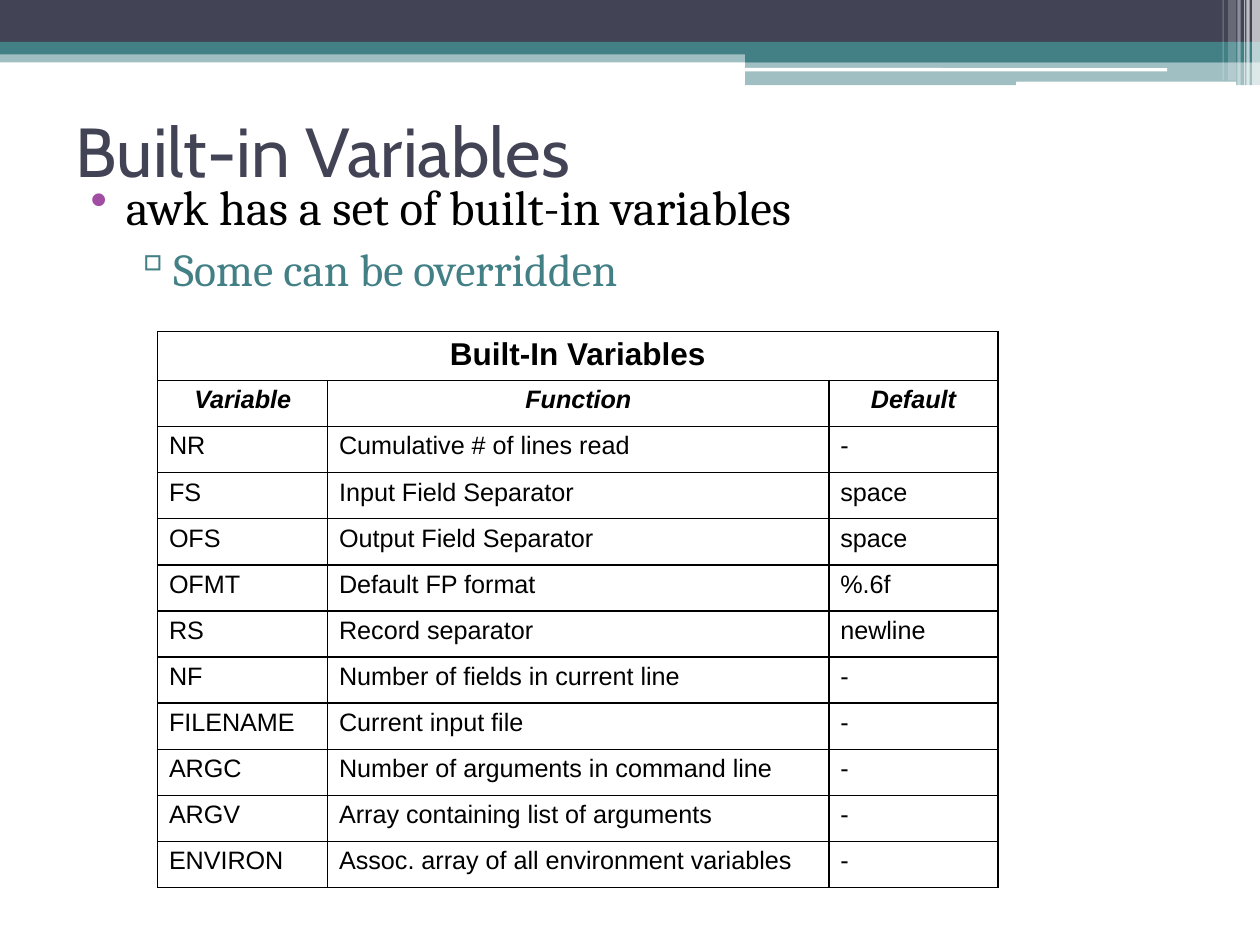
from dataclasses import dataclass

from lxml import etree
from pptx import Presentation
from pptx.dml.color import RGBColor
from pptx.enum.shapes import MSO_SHAPE
from pptx.enum.text import MSO_ANCHOR, PP_ALIGN
from pptx.oxml.ns import qn
from pptx.util import Inches, Pt

RECT = MSO_SHAPE.RECTANGLE
ROUNDED = MSO_SHAPE.ROUNDED_RECTANGLE
LEFT, CENTER = PP_ALIGN.LEFT, PP_ALIGN.CENTER
TOP, MIDDLE = MSO_ANCHOR.TOP, MSO_ANCHOR.MIDDLE
TITLE_ONLY = 5


@dataclass(frozen=True)
class Theme:
    navy: str = "424456"
    teal: str = "438086"
    purple: str = "A04DA3"
    white: str = "FFFFFF"
    black: str = "000000"
    title_font: str = "Cabin"
    body_font: str = "Cambria"
    table_font: str = "Arial"
    title_size: int = 44
    bullet_size: int = 31
    sub_bullet_size: int = 29
    caption_size: int = 20
    cell_size: int = 16
    border_width: float = 1


THEME = Theme()

# Header parts: left, top, width, height, colour, opacity in percent
BANDS = [
    (0, 0.45, 11.11, 0.1, THEME.teal, 50),
    (0, 0, 11.11, 0.38, THEME.navy, 100),
    (0, 0.37, 11.11, 0.11, THEME.teal, 100),
    (6.57, 0.44, 4.54, 0.11, THEME.teal, 100),
    (6.57, 0.53, 4.54, 0.22, THEME.teal, 50),
]
WHITE_BARS = [
    (6.57, 0.6, 3.72, 0.03, THEME.white, 100),
    (8.96, 0.72, 1.94, 0.04, THEME.white, 100),
]
STRIPES = [
    (left, 0, width, height, THEME.white, opacity)
    for left, width, height, opacity in [
        (11.04, 0.07, 0.76, 65), (10.99, 0.03, 0.76, 65),
        (10.97, 0.01, 0.76, 60), (10.91, 0.03, 0.76, 40),
        (10.83, 0.07, 0.71, 20), (10.78, 0.01, 0.71, 30),
    ]
]

# Bullets: text, size, colour, mark, mark colour, left margin, indent
BULLETS = [
    ("awk has a set of built-in variables", THEME.bullet_size, THEME.black,
     "•", THEME.purple, 0.44, -0.31),
    ("Some can be overridden", THEME.sub_bullet_size, THEME.teal,
     "▫", THEME.teal, 0.8, -0.3),
]

COLUMN_WIDTHS = [1.5, 4.42, 1.49]
VARIABLES = [
    ("Built-In Variables", "", ""),
    ("Variable", "Function", "Default"),
    ("NR", "Cumulative # of lines read", "-"),
    ("FS", "Input Field Separator", "space"),
    ("OFS", "Output Field Separator", "space"),
    ("OFMT", "Default FP format", "%.6f"),
    ("RS", "Record separator", "newline"),
    ("NF", "Number of fields in current line", "-"),
    ("FILENAME", "Current input file", "-"),
    ("ARGC", "Number of arguments in command line", "-"),
    ("ARGV", "Array containing list of arguments", "-"),
    ("ENVIRON", "Assoc. array of all environment variables", "-"),
]


def add_span(para, text, color, **formats):
    span = para.add_run()
    span.text = text
    span.font.color.rgb = RGBColor.from_string(color)
    for name, value in formats.items():
        setattr(span.font, name, value)


def set_frame(frame, anchor):
    formats = {
        "word_wrap": True, "vertical_anchor": anchor,
        "margin_left": Inches(0.11), "margin_right": Inches(0.11),
        "margin_top": Inches(0.06), "margin_bottom": Inches(0.06),
    }
    for name, value in formats.items():
        setattr(frame, name, value)


def add_header(page, box):
    left, top = box[:2]
    parts = [(RECT, BANDS), (ROUNDED, WHITE_BARS), (RECT, STRIPES)]
    for kind, bars in parts:
        for x, y, width, height, color, opacity in bars:
            shape = page.shapes.add_shape(
                kind, Inches(left + x), Inches(top + y), Inches(width), Inches(height))
            shape.shadow.inherit = False
            shape.line.fill.background()
            shape.fill.solid()
            shape.fill.fore_color.rgb = RGBColor.from_string(color)
            if opacity < 100:
                tint = shape.fill._xPr.find(".//" + qn("a:srgbClr"))
                etree.SubElement(tint, qn("a:alpha"), val=str(opacity * 1000))


def add_title(page, box):
    title = page.shapes.title
    title.left, title.top, title.width, title.height = map(Inches, box)
    set_frame(title.text_frame, MIDDLE)
    para = title.text_frame.paragraphs[0]
    para.alignment = LEFT
    add_span(para, "Built-in Variables", THEME.navy,
             name=THEME.title_font, size=Pt(THEME.title_size))


def add_bullets(page, box):
    frame = page.shapes.add_textbox(*map(Inches, box)).text_frame
    set_frame(frame, TOP)
    for level, (text, size, color, mark, mark_color, margin, indent) in enumerate(BULLETS):
        para = frame.add_paragraph() if level else frame.paragraphs[0]
        para.level = level
        if level:
            para.space_before = Pt(3.3)
        properties = para._p.get_or_add_pPr()
        properties.set("marL", str(Inches(margin)))
        properties.set("indent", str(Inches(indent)))
        tint = etree.SubElement(properties, qn("a:buClr"))
        etree.SubElement(tint, qn("a:srgbClr"), val=mark_color)
        etree.SubElement(properties, qn("a:buChar"), char=mark)
        add_span(para, text, color, name=THEME.body_font, size=Pt(size))


def add_borders(cell):
    properties = cell._tc.get_or_add_tcPr()
    for side in ("lnL", "lnR", "lnT", "lnB"):
        line = etree.SubElement(properties, qn("a:" + side), w=str(Pt(THEME.border_width)))
        fill = etree.SubElement(line, qn("a:solidFill"))
        etree.SubElement(fill, qn("a:srgbClr"), val=THEME.black)


def add_variable_table(page, box):
    table = page.shapes.add_table(
        len(VARIABLES), len(COLUMN_WIDTHS), *map(Inches, box)).table
    for column, width in zip(table.columns, COLUMN_WIDTHS):
        column.width = Inches(width)
    for index, values in enumerate(VARIABLES):
        table.rows[index].height = Inches(box[3] / len(VARIABLES))
        size = THEME.cell_size if index else THEME.caption_size
        for cell, text in zip(table.rows[index].cells, values):
            add_borders(cell)
            cell.fill.background()
            if text:
                para = cell.text_frame.paragraphs[0]
                para.alignment = CENTER if index < 2 else LEFT
                add_span(para, text, THEME.black, name=THEME.table_font,
                         size=Pt(size), bold=index < 2, italic=index == 1)
    table.cell(0, 0).merge(table.cell(0, len(COLUMN_WIDTHS) - 1))


def main():
    deck = Presentation()
    deck.slide_width, deck.slide_height = Inches(11.11), Inches(8.33)
    page = deck.slides.add_slide(deck.slide_layouts[TITLE_ONLY])
    add_header(page, (0, 0, 11.11, 0.76))
    add_title(page, (0.56, 0.67, 10, 1.3))
    add_bullets(page, (0.56, 1.5, 10, 1.68))
    add_variable_table(page, (1.39, 2.92, 7.41, 4.88))
    deck.save("out.pptx")


if __name__ == "__main__":
    main()
